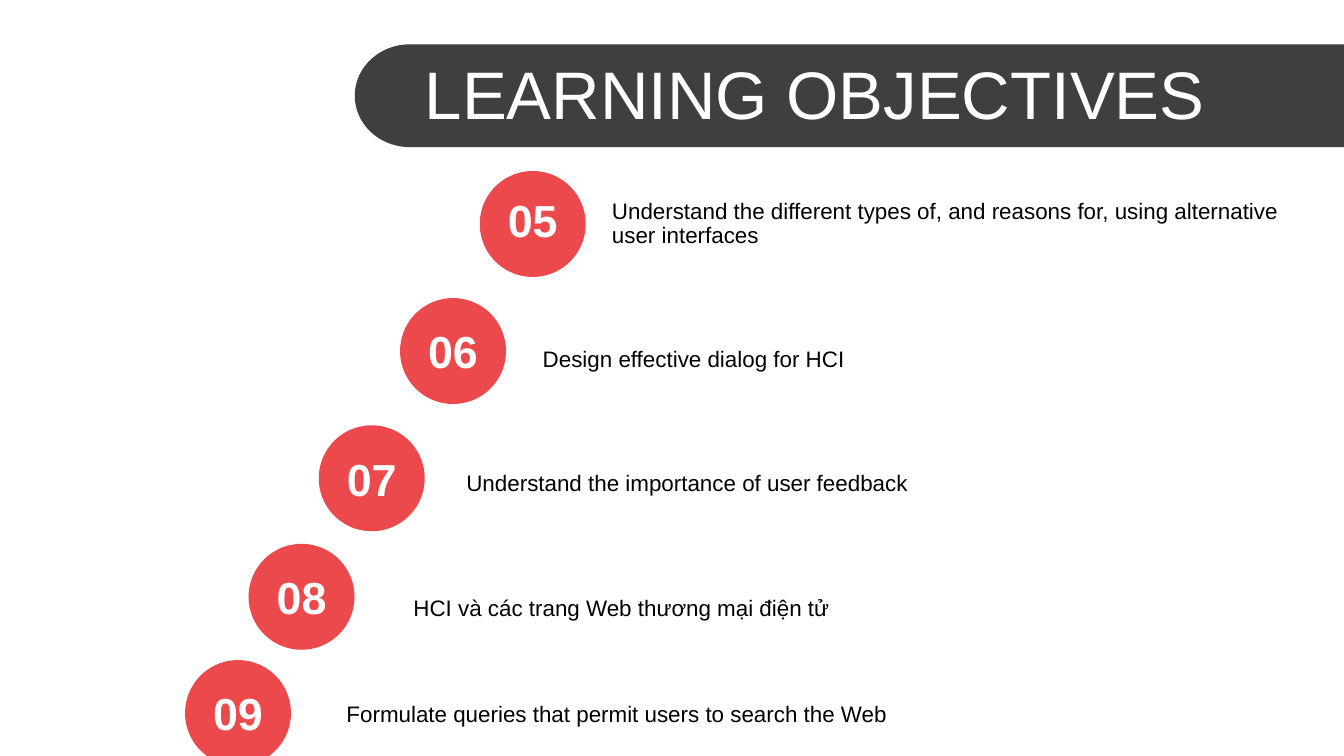
import math
import pptx
import pptx.util
from pptx.dml.color import RGBColor
from pptx.enum.shapes import MSO_SHAPE
from pptx.enum.text import MSO_ANCHOR, MSO_AUTO_SIZE, PP_ALIGN

CHARCOAL = RGBColor(0x3F, 0x3F, 0x3F)
CORAL = RGBColor(0xEB, 0x49, 0x4B)
WHITE = RGBColor(0xFF, 0xFF, 0xFF)
BLACK = RGBColor(0x00, 0x00, 0x00)

deck = pptx.Presentation()
deck.slide_width = pptx.util.Inches(10)
deck.slide_height = deck.slide_width * 9 // 16
page = deck.slides.add_slide(deck.slide_layouts[5])
UNIT = deck.slide_width / 100  # square grid, 100 columns across the slide


def grid(*cells):
    return [round(cell * UNIT) for cell in cells]


def write(box, text, size, color, align=PP_ALIGN.LEFT, bold=False):
    frame = box.text_frame
    frame.word_wrap = True
    frame.vertical_anchor = MSO_ANCHOR.MIDDLE
    para = frame.paragraphs[0]
    para.text = text
    para.alignment = align
    para.font.name = "Arial"
    para.font.size = pptx.util.Pt(size)
    para.font.bold = bold
    para.font.color.rgb = color
    return para


# Title bar: rounded on the left, running to the right edge
BAR_LEFT, BAR_TOP, BAR_HEIGHT, CAP = 26.4, 3.3, 7.65, 4.1
radius = BAR_HEIGHT / 2
STEPS = 48
arc = []
for step in range(STEPS + 1):
    angle = math.pi * step / STEPS
    arc.append(grid(BAR_LEFT + CAP - CAP * math.sin(angle),
                    BAR_TOP + radius + radius * math.cos(angle)))
outline = page.shapes.build_freeform(*grid(100, BAR_TOP))
outline.add_line_segments([grid(100, BAR_TOP + BAR_HEIGHT)] + arc, close=True)
bar = outline.convert_to_shape()
bar.shadow.inherit = False
bar.fill.solid()
bar.fill.fore_color.rgb = CHARCOAL
bar.line.fill.background()

# Title, in front of the bar
title = page.shapes.title
title.left, title.top, title.width, title.height = grid(30.6, 3.75, 69.4, 6.3)
write(title, "LEARNING OBJECTIVES", 36, WHITE)
title.text_frame.auto_size = MSO_AUTO_SIZE.NONE
bar.element.addnext(title.element)

# Objectives: circle left and top, number top, then text left, top, width, height
DIAMETER, NUMBER_HEIGHT = 7.88, 5
objectives = [
    (35.7, 12.73, 13.85, 44.55, 14.4, 52.7, 4.6,
     "Understand the different types of, and reasons for, using alternative user interfaces"),
    (29.77, 22.18, 23.6, 39.4, 25.2, 54.7, 3, "Design effective dialog for HCI"),
    (23.72, 31.65, 33.1, 33.72, 34.4, 50.4, 3, "Understand the importance of user feedback"),
    (18.5, 40.47, 41.9, 29.78, 43.7, 50.4, 3, "HCI và các trang Web thương mại điện tử"),
    (13.77, 49.12, 50.55, 24.8, 51.6, 50.4, 3,
     "Formulate queries that permit users to search the Web"),
]
for number, objective in enumerate(objectives, start=5):
    left, top, number_top, text_left, text_top, width, height, text = objective

    circle = page.shapes.add_shape(MSO_SHAPE.OVAL, *grid(left, top, DIAMETER, DIAMETER))
    circle.shadow.inherit = False
    circle.fill.solid()
    circle.fill.fore_color.rgb = CORAL
    circle.line.fill.background()

    label = page.shapes.add_textbox(*grid(left, number_top, DIAMETER, NUMBER_HEIGHT))
    write(label, f"{number:02d}", 24, WHITE, PP_ALIGN.CENTER, True)
    label.text_frame.auto_size = MSO_AUTO_SIZE.SHAPE_TO_FIT_TEXT

    box = page.shapes.add_textbox(*grid(text_left, text_top, width, height))
    para = write(box, text, 12, BLACK)
    box.text_frame.auto_size = MSO_AUTO_SIZE.SHAPE_TO_FIT_TEXT
    if number == 5:
        para.line_spacing = 0.9  # the only objective on two lines

deck.save("out.pptx")
